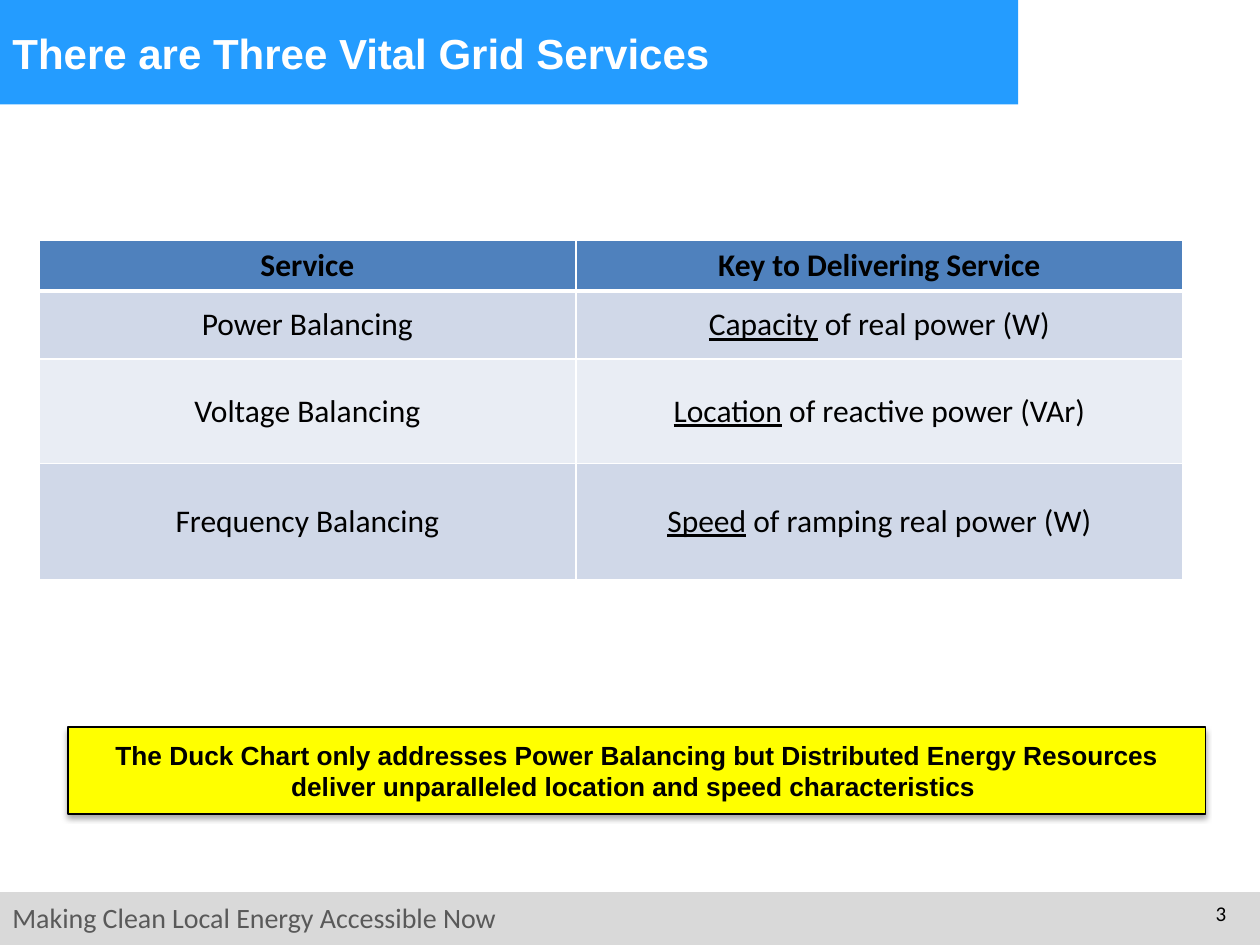
from lxml.etree import SubElement
from pptx import Presentation
from pptx.dml.color import RGBColor
from pptx.enum.shapes import MSO_SHAPE
from pptx.enum.text import MSO_ANCHOR, PP_ALIGN
from pptx.oxml import parse_xml
from pptx.oxml.ns import nsdecls, qn
from pptx.util import Inches, Pt

BLACK = RGBColor(0x00, 0x00, 0x00)
WHITE = RGBColor(0xFF, 0xFF, 0xFF)
BANNER_BLUE = RGBColor(0x24, 0x9C, 0xFF)
HEADER_BLUE = RGBColor(0x4F, 0x81, 0xBD)
BAND_DARK = RGBColor(0xD0, 0xD8, 0xE8)
BAND_LIGHT = RGBColor(0xE9, 0xED, 0xF4)
YELLOW = RGBColor(0xFF, 0xFF, 0x00)
FOOTER_GREY = RGBColor(0xD9, 0xD9, 0xD9)
FOOTER_TEXT = RGBColor(0x59, 0x59, 0x59)

COLS, ROWS = 100, 75  # layout grid of the slide


def write(tf, text, size=18, font="Calibri", color=BLACK, bold=False,
          align=PP_ALIGN.LEFT, anchor=MSO_ANCHOR.TOP, underlined=""):
    """Write one paragraph, with an optional underlined lead-in."""
    tf.word_wrap = True
    tf.vertical_anchor = anchor
    p = tf.paragraphs[0]
    p.alignment = align
    for part, underline in ((underlined, True), (text, False)):
        if part:
            r = p.add_run()
            r.text = part
            r.font.size, r.font.name = Pt(size), font
            r.font.bold, r.font.underline = bold, underline
            r.font.color.rgb = color


class SlideBuilder:
    def __init__(self, prs):
        self.s = prs.slides.add_slide(prs.slide_layouts[6])
        self.col = prs.slide_width / COLS
        self.row = prs.slide_height / ROWS

    def place(self, x, y, w, h):
        return (round(x * self.col), round(y * self.row),
                round(w * self.col), round(h * self.row))

    def rect(self, box, fill, line=None):
        sp = self.s.shapes.add_shape(MSO_SHAPE.RECTANGLE, *self.place(*box))
        sp.shadow.inherit = False
        sp.fill.solid()
        sp.fill.fore_color.rgb = fill
        if line is None:
            sp.line.fill.background()
        else:
            sp.line.color.rgb = line
            sp.line.width = Pt(0.75)
        return sp

    def text(self, box, text, **style):
        sp = self.s.shapes.add_textbox(*self.place(*box))
        write(sp.text_frame, text, **style)

    def callout(self, box, text, **style):
        sp = self.rect(box, YELLOW, BLACK)
        write(sp.text_frame, text, align=PP_ALIGN.CENTER,
              anchor=MSO_ANCHOR.MIDDLE, **style)
        # Soft shadow straight below
        effects = sp._element.spPr.find(qn("a:effectLst"))
        shadow = SubElement(effects, qn("a:outerShdw"), blurRad=str(Pt(3.1)),
                            dist=str(Pt(1.8)), dir="5400000", rotWithShape="0")
        color = SubElement(shadow, qn("a:srgbClr"), val=str(BLACK))
        SubElement(color, qn("a:alpha"), val="35000")

    def borders(self, cell, bottom):
        tcPr = cell._tc.get_or_add_tcPr()
        widths = {"lnL": 1, "lnR": 1, "lnT": 1, "lnB": bottom}
        for i, (side, width) in enumerate(widths.items()):
            tcPr.insert(i, parse_xml(
                f'<a:{side} {nsdecls("a")} w="{Pt(width)}"><a:solidFill>'
                f'<a:srgbClr val="{WHITE}"/></a:solidFill></a:{side}>'))

    def table(self, x, y, widths, heights, rows):
        box = self.place(x, y, sum(widths), sum(heights))
        table = self.s.shapes.add_table(len(rows), len(widths), *box).table
        for column, width in zip(table.columns, widths):
            column.width = round(width * self.col)
        for i, (height, row) in enumerate(zip(heights, rows)):
            table.rows[i].height = round(height * self.row)
            header = i == 0
            fill = HEADER_BLUE if header else (BAND_LIGHT, BAND_DARK)[i % 2]
            service, keyword, rest = row
            for j, (lead, text) in enumerate((("", service), (keyword, rest))):
                cell = table.cell(i, j)
                cell.fill.solid()
                cell.fill.fore_color.rgb = fill
                cell.vertical_anchor = MSO_ANCHOR.MIDDLE
                self.borders(cell, bottom=3 if header else 1)
                write(cell.text_frame, text, underlined=lead, bold=header,
                      align=PP_ALIGN.CENTER, anchor=None)


def main():
    prs = Presentation()
    prs.slide_width, prs.slide_height = Inches(10), Inches(7.5)
    slide = SlideBuilder(prs)

    # Footer band with tagline and page number
    slide.rect((0, 70.8, COLS, 4.2), FOOTER_GREY)
    slide.text((0, 71, 51.7, 3.7), "Making Clean Local Energy Accessible Now",
               size=16, color=FOOTER_TEXT)
    slide.text((93.3, 71, 5, 4), "3", size=12, align=PP_ALIGN.RIGHT)

    # Title banner
    banner = (0, 0, 80.8, 8.3)
    slide.rect(banner, BANNER_BLUE)
    slide.text(banner, "There are Three Vital Grid Services", size=24,
               font="Arial", color=WHITE, bold=True, anchor=MSO_ANCHOR.MIDDLE)

    # Grid services: service, underlined keyword, rest of the key
    slide.table(3.1, 19.1, (42.6, 48.2), (4, 5.4, 8.3, 9.2), [
        ("Service", "", "Key to Delivering Service"),
        ("Power Balancing", "Capacity", " of real power (W)"),
        ("Voltage Balancing", "Location", " of reactive power (VAr)"),
        ("Frequency Balancing", "Speed", " of ramping real power (W)"),
    ])

    # Takeaway
    slide.callout((5.4, 57.7, 90.3, 6.9),
                  "The Duck Chart only addresses Power Balancing but "
                  "Distributed Energy Resources deliver unparalleled "
                  "location and speed characteristics ",
                  size=15, font="Arial", bold=True)

    prs.save("out.pptx")


if __name__ == "__main__":
    main()
